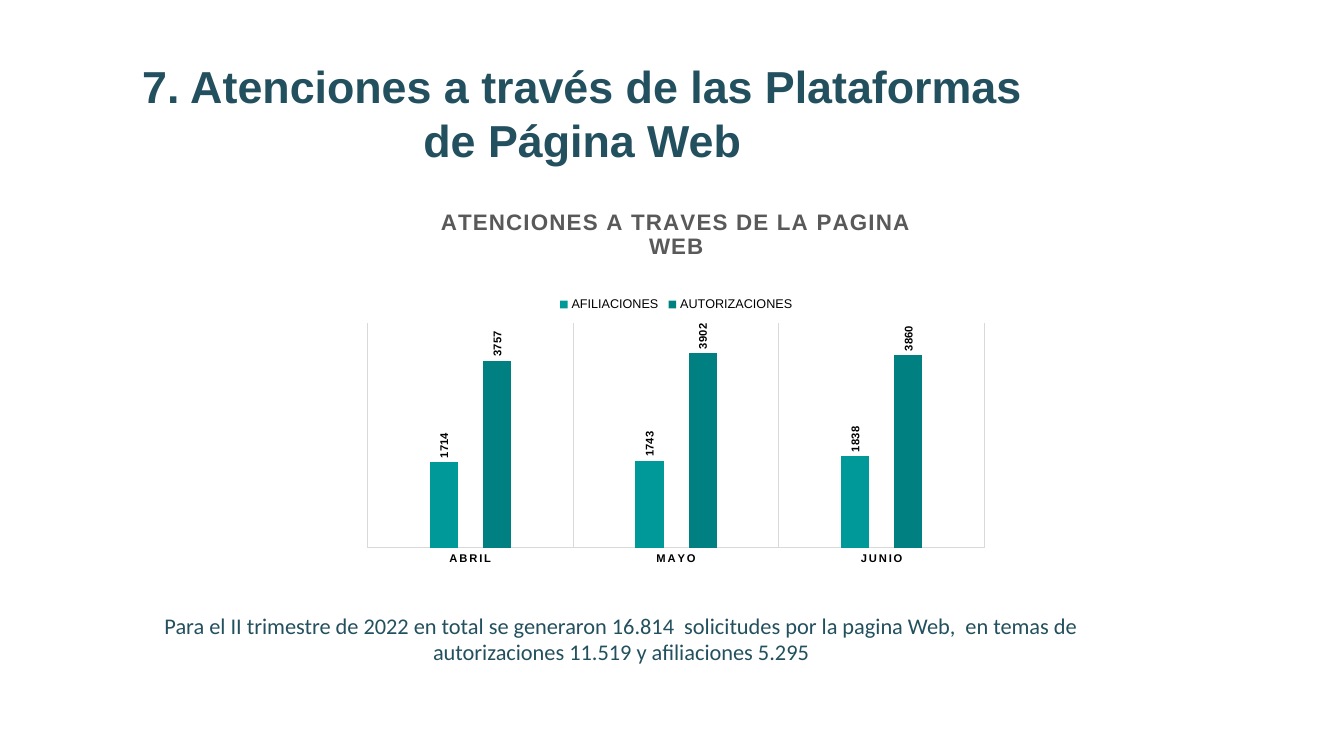
from dataclasses import dataclass

from lxml import etree
from pptx import Presentation
from pptx import util as u
from pptx.chart.data import CategoryChartData
from pptx.dml.color import RGBColor
from pptx.enum import chart as ch, text
from pptx.oxml.ns import qn


@dataclass(frozen=True)
class Theme:
    head: str = "Arial"
    body: str = "Calibri"
    ink: str = "23505E"
    black: str = "000000"
    gray: str = "595959"
    line: str = "D9D9D9"
    bars: tuple = ("009999", "008080")
    title: int = 32
    note: int = 16
    chart: int = 16
    base: int = 10
    key: int = 9
    label: int = 8


T = Theme()


def style(font, size, color, name=T.head, bold=False):
    font.name, font.size, font.bold = name, u.Pt(size), bold
    font.color.rgb = RGBColor.from_string(color)


def rule(line):
    line.color.rgb = RGBColor.from_string(T.line)
    line.width = u.Pt(0.75)


def add_text(slide, box, words, size, name, bold=False):
    """Centred paragraph filling the box."""
    frame = slide.shapes.add_textbox(*box).text_frame
    frame.word_wrap = True
    frame.text = words
    par = frame.paragraphs[0]
    par.alignment = text.PP_ALIGN.CENTER
    style(par.runs[0].font, size, T.ink, name, bold)


def place(node, x, y, w, h, inner=False):
    """Fix a chart part at fractions of the chart's size."""
    old = node.find(qn("c:layout"))
    if old is not None:
        node.remove(old)
    lay = etree.Element(qn("c:layout"))
    man = etree.SubElement(lay, qn("c:manualLayout"))
    parts = [("layoutTarget", "inner")] if inner else []
    parts += [("xMode", "edge"), ("yMode", "edge"),
              ("x", x), ("y", y), ("w", w), ("h", h)]
    for tag, val in parts:
        etree.SubElement(man, qn("c:" + tag)).set("val", str(val))
    if inner:
        node.insert(0, lay)
    else:
        node.find(qn("c:legendPos")).addnext(lay)


def add_bars(slide, box, title, months, rows):
    data = CategoryChartData(number_format="General")
    data.categories = months
    for name, vals in rows:
        data.add_series(name, vals)
    kind = ch.XL_CHART_TYPE.COLUMN_CLUSTERED
    chart = slide.shapes.add_chart(kind, *box, data).chart
    style(chart.font, T.base, T.black)

    # Heading
    chart.has_title = True
    frame = chart.chart_title.text_frame
    frame.text = title
    font = frame.paragraphs[0].runs[0].font
    style(font, T.chart, T.gray, bold=True)
    frame.paragraphs[0].runs[0]._r.get_or_add_rPr().set("spc", "100")
    chart.chart_title.include_in_layout = False

    # Legend
    chart.has_legend = True
    key = chart.legend
    key.position = ch.XL_LEGEND_POSITION.TOP
    key.include_in_layout = False
    style(key.font, T.key, T.black)
    place(key._element, 0.31, 0.27, 0.38, 0.06)

    # Axes
    cat, val = chart.category_axis, chart.value_axis
    cat.major_tick_mark = ch.XL_TICK_MARK.NONE
    cat.has_major_gridlines = True
    rule(cat.major_gridlines.format.line)
    rule(cat.format.line)
    style(cat.tick_labels.font, T.label, T.black, bold=True)
    for run in cat._element.iter(qn("a:defRPr")):
        run.set("spc", "120")
    val.has_major_gridlines = False
    val.minimum_scale, val.maximum_scale = 0, 4500
    val.visible = False

    # Columns and upright values
    plot = chart.plots[0]
    plot.gap_width, plot.overlap = 444, -90
    plot.vary_by_categories = False
    for row, color in zip(plot.series, T.bars):
        row.format.fill.solid()
        row.format.fill.fore_color.rgb = RGBColor.from_string(color)
        tags = row.data_labels
        tags.show_value = True
        tags.position = ch.XL_LABEL_POSITION.OUTSIDE_END
        style(tags.font, T.label, T.black, bold=True)
        body = tags._element.find(qn("c:txPr")).find(qn("a:bodyPr"))
        body.set("rot", "-5400000")
        body.set("vert", "horz")
    area = chart._chartSpace.find(qn("c:chart")).find(qn("c:plotArea"))
    place(area, 0.02, 0.35, 0.96, 0.59, inner=True)


def box(*sides):
    return [u.Cm(side) for side in sides]


def main():
    deck = Presentation()
    deck.slide_width, deck.slide_height = u.Cm(33.87), u.Cm(19.05)
    slide = deck.slides.add_slide(deck.slide_layouts[6])

    # Title
    add_text(slide, box(2.97, 1.35, 23.42, 3),
             "7. Atenciones a través de las Plataformas de Página Web",
             T.title, T.head, True)
    # Summary
    add_text(slide, box(3.45, 15.29, 24.41, 2.31),
             "Para el II trimestre de 2022 en total se generaron 16.814  "
             "solicitudes por la pagina Web,  en temas de autorizaciones "
             "11.519 y afiliaciones 5.295", T.note, T.body)
    # Chart
    add_bars(slide, box(8.94, 4.8, 16.2, 9.58),
             "ATENCIONES A TRAVES DE LA PAGINA WEB",
             ["ABRIL", "MAYO", "JUNIO"],
             [("AFILIACIONES", (1714, 1743, 1838)),
              ("AUTORIZACIONES", (3757, 3902, 3860))])
    deck.save("out.pptx")


if __name__ == "__main__":
    main()
